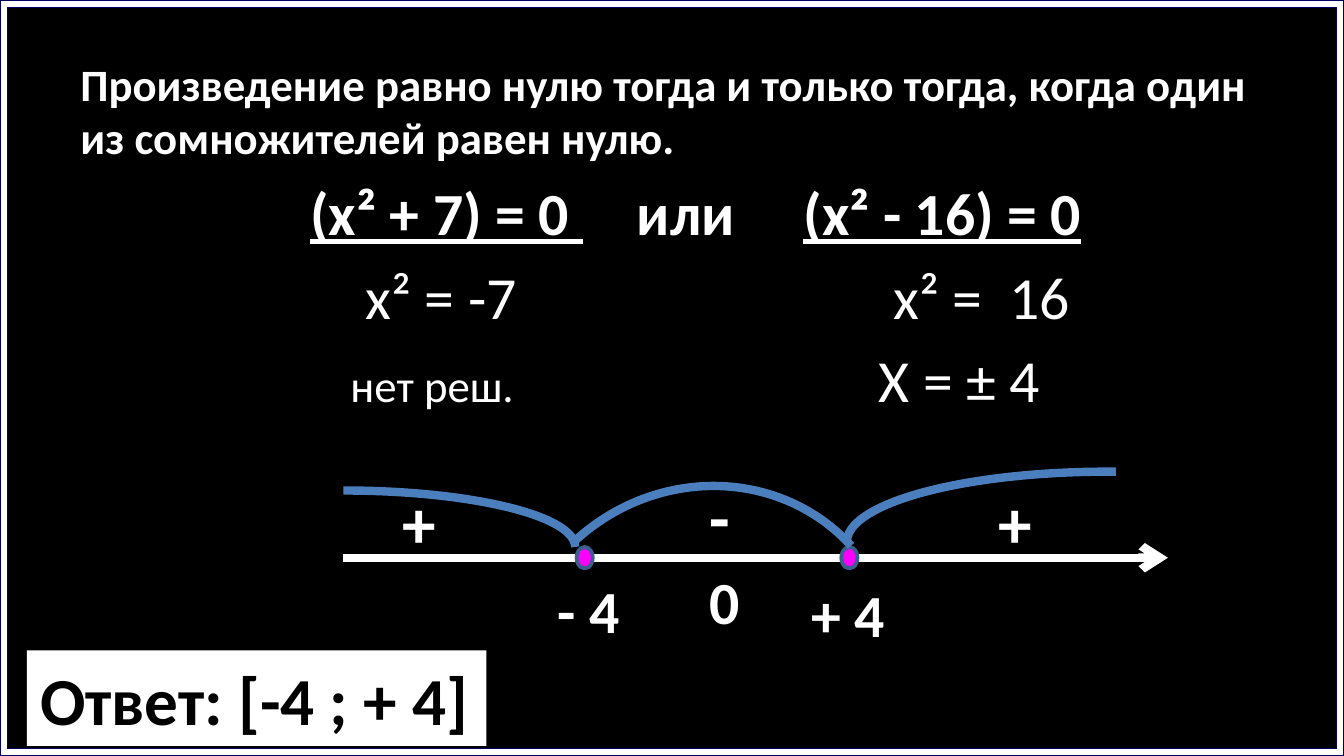
from pptx import Presentation
from pptx.dml.color import RGBColor
from pptx.enum.shapes import MSO_CONNECTOR, MSO_SHAPE
from pptx.enum.text import PP_ALIGN
from pptx.oxml.ns import qn
from pptx.util import Inches, Pt
from lxml import etree

BLACK = RGBColor(0x00, 0x00, 0x00)
WHITE = RGBColor(0xFF, 0xFF, 0xFF)
NAVY = RGBColor(0x00, 0x00, 0x66)
BLUE = RGBColor(0x4B, 0x7E, 0xBC)
DARK_BLUE = RGBColor(0x3A, 0x5F, 0x8C)
MAGENTA = RGBColor(0xFF, 0x00, 0xFF)
FONT = "Calibri"
PAGE_WIDTH = 10
PAGE_HEIGHT = PAGE_WIDTH * 9 / 16
AXIS_Y = 4.15

# Tab stops in inches, space before in points, runs of (text, size, bold, underline)
SOLUTION = [
    ([], 0, [("Произведение равно нулю тогда и только тогда, когда один "
              "из сомножителей равен нулю.", 24, True, False)]),
    ([1.71, 4.14, 5.38], 6.4, [("\t", 32, True, False),
                               ("(х² + 7) = 0 ", 32, True, True),
                               ("\tили\t", 32, True, False),
                               ("(х² - 16) = 0", 32, True, True)]),
    ([2.12, 6.05, 6.91], 6.4, [("\tх² = -7\tх² =\t16", 32, False, False)]),
    ([2.01, 5.94], 6.4, [("\t", 32, False, False),
                         ("нет реш.", 24, False, False),
                         ("\tХ = ± 4", 32, False, False)]),
]
# Left, top, width, height, text, size
AXIS_LABELS = [
    (4.05, 4.22, 0.67, 0.64, "- 4", 32),
    (5.94, 4.25, 0.76, 0.64, "+ 4", 32),
    (5.18, 4.15, 0.43, 0.64, "0", 32),
    (5.18, 3.49, 0.36, 0.71, "-", 36),
    (2.90, 3.53, 0.45, 0.71, "+", 36),
    (7.33, 3.53, 0.45, 0.71, "+", 36),
]


def add_span(para, text, size, color=WHITE, bold=True, underline=False):
    span = para.add_run()
    span.text = text
    font = span.font
    font.name, font.size, font.bold, font.underline = FONT, Pt(size), bold, underline
    font.color.rgb = color


def add_preset(page, kind, left, top, width, height, fill=None, line=None, weight=1):
    shape = page.shapes.add_shape(
        kind, Inches(left), Inches(top), Inches(width), Inches(height))
    shape.shadow.inherit = False
    if fill is None:
        shape.fill.background()
    else:
        shape.fill.solid()
        shape.fill.fore_color.rgb = fill
    if line is None:
        shape.line.fill.background()
    else:
        shape.line.color.rgb = line
        shape.line.width = Pt(weight)
    return shape


def add_label(page, left, top, width, height, text, size):
    box = page.shapes.add_textbox(
        Inches(left), Inches(top), Inches(width), Inches(height))
    box.text_frame.word_wrap = False
    add_span(box.text_frame.paragraphs[0], text, size)


def add_tab_stops(para, stops):
    tabs = etree.SubElement(para._p.get_or_add_pPr(), qn("a:tabLst"))
    for stop in stops:
        etree.SubElement(tabs, qn("a:tab"), pos=str(Inches(stop)), algn="l")


def add_solution(page):
    box = page.shapes.add_textbox(Inches(0.5), Inches(0.37), Inches(9), Inches(4.65))
    frame = box.text_frame
    frame.word_wrap = True
    for index, (stops, space, spans) in enumerate(SOLUTION):
        para = frame.add_paragraph() if index else frame.paragraphs[0]
        if stops:
            add_tab_stops(para, stops)
        para.space_before = Pt(space)
        for text, size, bold, underline in spans:
            add_span(para, text, size, bold=bold, underline=underline)


def add_axis(page):
    axis = page.shapes.add_connector(
        MSO_CONNECTOR.STRAIGHT, Inches(2.55), Inches(AXIS_Y), Inches(8.69), Inches(AXIS_Y))
    axis.line.color.rgb = WHITE
    axis.line.width = Pt(4.5)
    line = axis.element.spPr.find(qn("a:ln"))
    etree.SubElement(line, qn("a:tailEnd"), type="arrow")
    etree.SubElement(axis.element.spPr, qn("a:effectLst"))
    for left in (4.29, 6.26):
        add_preset(page, MSO_SHAPE.OVAL, left, AXIS_Y - 0.08, 0.12, 0.16,
                   MAGENTA, DARK_BLUE, 2)


def add_sign_arcs(page):
    add_preset(page, MSO_SHAPE.ARC, 0.83, 3.65, 3.45, 0.84, line=BLUE, weight=4.5)
    right = add_preset(page, MSO_SHAPE.ARC, 6.3, 3.51, 3.88, 1.05, line=BLUE, weight=4.5)
    right.adjustments[0] = 157.93
    right.element.spPr.find(qn("a:xfrm")).set("flipH", "1")
    middle = add_preset(page, MSO_SHAPE.ARC, 3.75, 3.65, 2.97, 2.82, line=BLUE, weight=4.5)
    middle.rotation = 317.7


def add_answer(page):
    box = add_preset(page, MSO_SHAPE.RECTANGLE, 0.2, 4.84, 3.42, 0.71, WHITE)
    box.text_frame.word_wrap = False
    para = box.text_frame.paragraphs[0]
    para.alignment = PP_ALIGN.LEFT
    add_span(para, "Ответ: [-4 ; + 4]", 36, BLACK)


def main():
    deck = Presentation()
    deck.slide_width, deck.slide_height = Inches(PAGE_WIDTH), Inches(PAGE_HEIGHT)
    page = deck.slides.add_slide(deck.slide_layouts[6])
    page.background.fill.solid()
    page.background.fill.fore_color.rgb = BLACK
    border = add_preset(page, MSO_SHAPE.FRAME, 0, 0, PAGE_WIDTH, PAGE_HEIGHT,
                        WHITE, NAVY, 0.75)
    border.adjustments[0] = 0.01
    add_solution(page)
    add_axis(page)
    add_sign_arcs(page)
    for label in AXIS_LABELS:
        add_label(page, *label)
    add_answer(page)
    deck.save("out.pptx")


if __name__ == "__main__":
    main()
